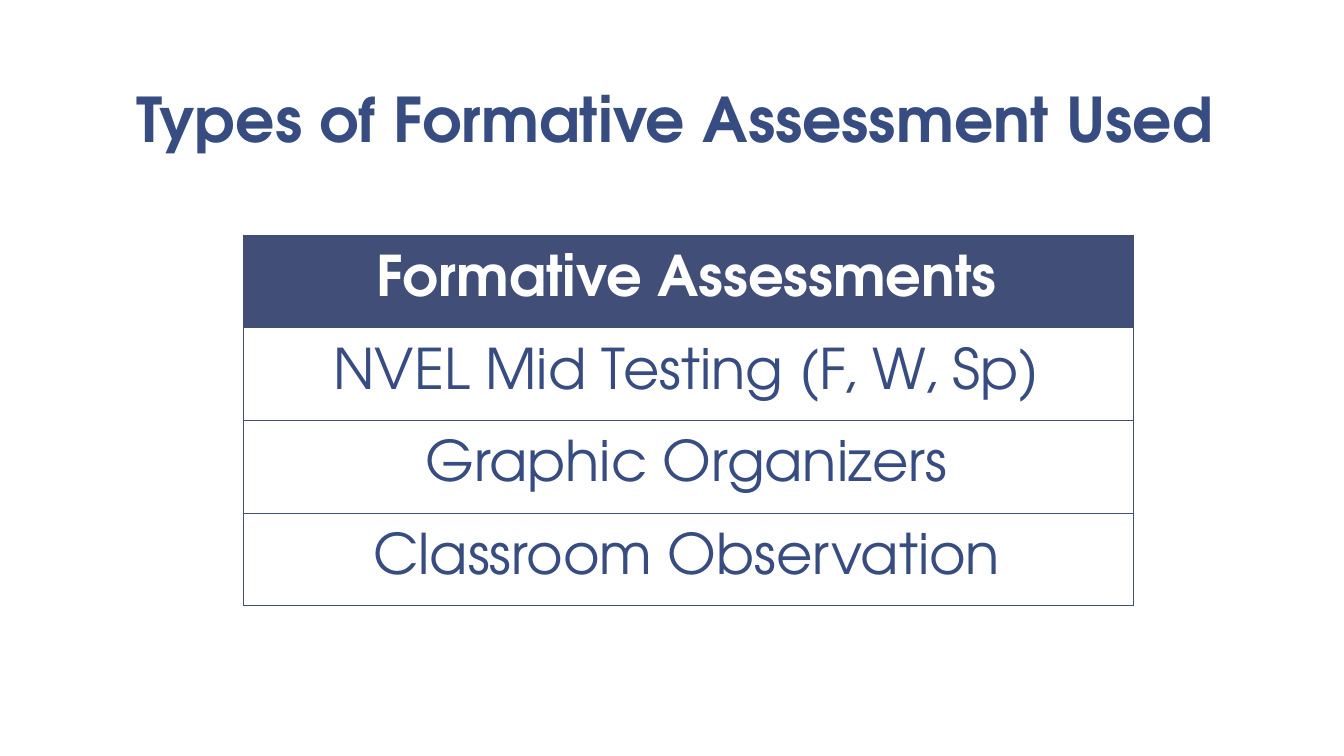
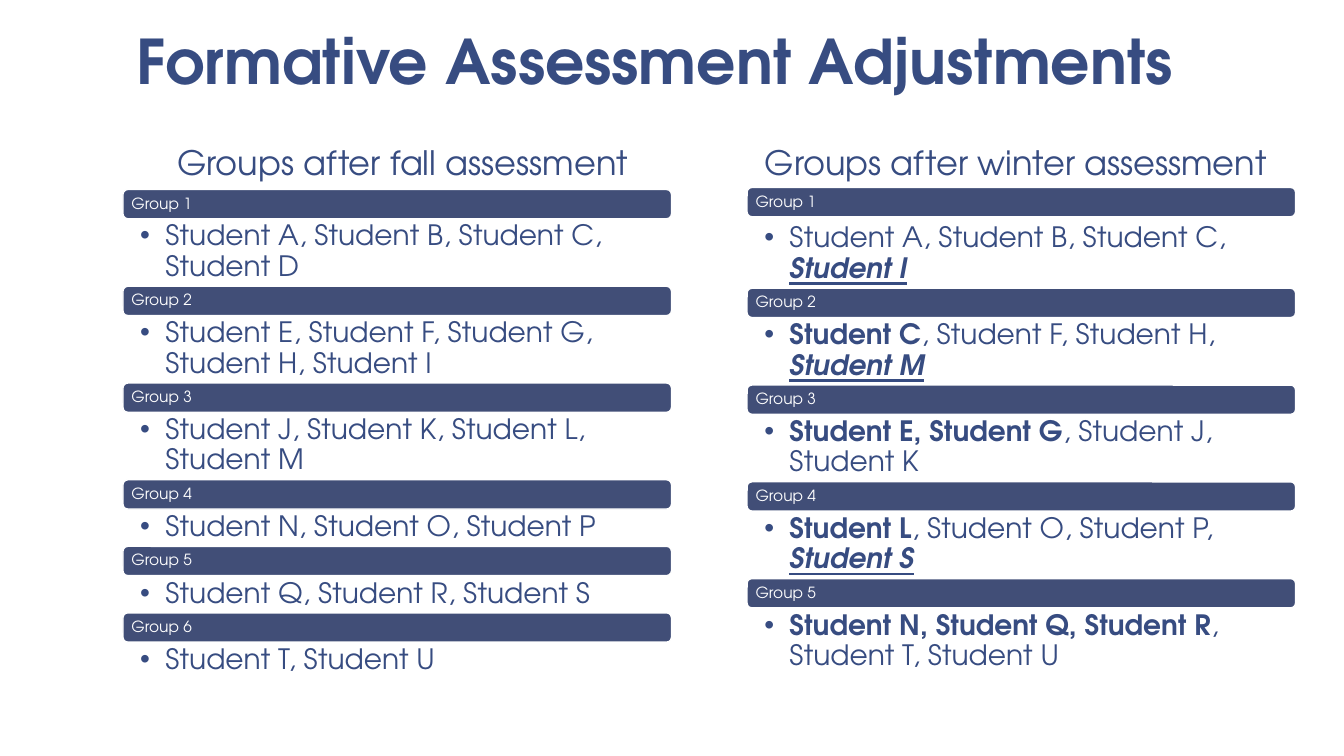
from pptx import Presentation
from pptx.dml.color import RGBColor
from pptx.enum.shapes import MSO_SHAPE
from pptx.enum.text import MSO_ANCHOR, MSO_AUTO_SIZE, PP_ALIGN
from pptx.oxml.ns import qn
from pptx.util import Inches, Pt
from lxml.etree import Element, SubElement

COLORS = {"text": "374C81", "band": "414E77", "white": "FFFFFF"}
FONT = "TeX Gyre Adventor"
EMPHASIS = {
    "plain": {"bold": False},
    "moved": {"bold": True},
    "new": {"bold": True, "italic": True, "underline": True},
}


def set_font(font, size, color="text", **values):
    font.color.rgb = RGBColor.from_string(COLORS[color])
    for name, value in {"name": FONT, "size": Pt(size), **values}.items():
        setattr(font, name, value)


def set_frame(sp, box, margins, anchor):
    for name, value in zip(("left", "top", "width", "height"), box):
        setattr(sp, name, Inches(value))
    tf = sp.text_frame
    values = {"word_wrap": True, "auto_size": MSO_AUTO_SIZE.NONE, "vertical_anchor": anchor}
    for side, value in zip(("left", "top", "right", "bottom"), margins):
        values["margin_" + side] = Inches(value)
    for name, value in values.items():
        setattr(tf, name, value)
    return tf


prs = Presentation()
prs.slide_width, prs.slide_height = Inches(13.33), Inches(7.5)

slides = []
for layout, title, top in (
    (5, "Types of Formative Assessment Used", 0.08),
    (4, "Formative Assessment Adjustments", -0.5),
):
    s = prs.slides.add_slide(prs.slide_layouts[layout])
    tf = set_frame(s.shapes.title, (1.22, top, 11.11, 1.53),
                   (0.13, 0.07, 0.13, 0.07), MSO_ANCHOR.BOTTOM)
    tf.text = title
    p = tf.paragraphs[0]
    p.alignment = PP_ALIGN.LEFT
    p.line_spacing = 0.85
    set_font(p.runs[0].font, 44, bold=True)
    slides.append(s)
types_slide, groups_slide = slides

assessments = [
    "Formative Assessments",
    "NVEL Mid Testing (F, W, Sp)",
    "Graphic Organizers",
    "Classroom Observation",
]
col_widths = [0.4, 8, 0.43]
row_height = 0.92
table = types_slide.shapes.add_table(
    len(assessments), len(col_widths), Inches(2.41), Inches(2.33),
    Inches(sum(col_widths)), Inches(row_height * len(assessments))).table
table.first_row = table.horz_banding = False
for col, width in zip(table.columns, col_widths):
    col.width = Inches(width)

for row, name in enumerate(assessments):
    table.rows[row].height = Inches(row_height)
    for col in range(len(col_widths)):
        cell = table.cell(row, col)
        cell.vertical_anchor = MSO_ANCHOR.MIDDLE
        if row == 0:
            cell.fill.solid()
            cell.fill.fore_color.rgb = RGBColor.from_string(COLORS["band"])
        else:
            cell.fill.background()
        if col == 1:
            cell.text = name
            p = cell.text_frame.paragraphs[0]
            p.alignment = PP_ALIGN.CENTER
            set_font(p.runs[0].font, 40, "text" if row else "white", bold=row == 0)
        visible = {"lnL": col == 0, "lnR": col == 2, "lnT": True, "lnB": True}
        for i, (side, shown) in enumerate(visible.items()):
            ln = Element(qn("a:" + side), w=str(Pt(0.5)))
            if shown:
                fill = SubElement(ln, qn("a:solidFill"))
                SubElement(fill, qn("a:srgbClr"), val=COLORS["band"])
            else:
                SubElement(ln, qn("a:noFill"))
            cell._tc.get_or_add_tcPr().insert(i, ln)

fall = [
    [("Student A, Student B, Student C, Student D", "plain")],
    [("Student E, Student F, Student G, Student H, Student I", "plain")],
    [("Student J, Student K, Student L, Student M", "plain")],
    [("Student N, Student O, Student P", "plain")],
    [("Student Q, Student R, Student S", "plain")],
    [("Student T, Student U", "plain")],
]
winter = [
    [("Student A, Student B, Student C, ", "plain"), ("Student I", "new")],
    [("Student C", "moved"), (", Student F, Student H, ", "plain"), ("Student M", "new")],
    [("Student E, Student G", "moved"), (", Student J, Student K", "plain")],
    [("Student L", "moved"), (", Student O, Student P, ", "plain"), ("Student S", "new")],
    [("Student N, Student Q, Student R", "moved"), (", Student T, Student U", "plain")],
]
columns = [
    ("Groups after fall assessment", 1.33, 1.22, 1.88, 2.17, fall),
    ("Groups after winter assessment", 7.41, 7.41, 1.86, 2.19, winter),
]
band_height = 0.29
placeholders = {ph.placeholder_format.idx: ph for ph in groups_slide.placeholders}

for i, (heading, heading_left, left, band_top, list_top, groups) in enumerate(columns):
    tf = set_frame(placeholders[2 * i + 1], (heading_left, 1.36, 5.33, 0.5),
                   (0.1, 0.05, 0.1, 0.05), MSO_ANCHOR.TOP)
    tf.text = heading
    p = tf.paragraphs[0]
    p.alignment = PP_ALIGN.CENTER
    p.space_before = Pt(0)
    set_font(p.runs[0].font, 24, bold=False)

    tf = set_frame(placeholders[2 * i + 2], (left, list_top, 5.44, 6.75 - list_top),
                   (0.17, 0.03, 0.16, 0.03), MSO_ANCHOR.TOP)
    next_top = list_top - band_height
    for n, runs in enumerate(groups):
        sp = groups_slide.shapes.add_shape(
            MSO_SHAPE.ROUNDED_RECTANGLE, Inches(left), Inches(band_top),
            Inches(5.44), Inches(band_height))
        sp.shadow.inherit = False
        sp.fill.solid()
        sp.fill.fore_color.rgb = RGBColor.from_string(COLORS["band"])
        sp.line.color.rgb = RGBColor.from_string(COLORS["white"])
        sp.line.width = Pt(1)
        band = set_frame(sp, (left, band_top, 5.44, band_height),
                         (0.07, 0.05, 0.07, 0.05), MSO_ANCHOR.MIDDLE)
        band.text = f"Group {n + 1}"
        p = band.paragraphs[0]
        p.alignment = PP_ALIGN.LEFT
        p.line_spacing = 0.9
        set_font(p.runs[0].font, 11, "white")

        p = tf.paragraphs[0] if n == 0 else tf.add_paragraph()
        pPr = p._p.get_or_add_pPr()
        pPr.set("marL", str(Inches(0.25)))
        pPr.set("indent", str(Inches(-0.25)))
        SubElement(pPr, qn("a:buChar"), char="•")
        p.line_spacing = 0.9
        p.space_before = Pt(26 if n else 0)
        p.space_after = Pt(0)
        for text, emphasis in runs:
            r = p.add_run()
            r.text = text
            set_font(r.font, 20, **EMPHASIS[emphasis])

        two_lines = sum(len(text) for text, _ in runs) > 35
        next_top += 0.96 if two_lines else 0.66
        band_top = next_top

prs.save("out.pptx")
